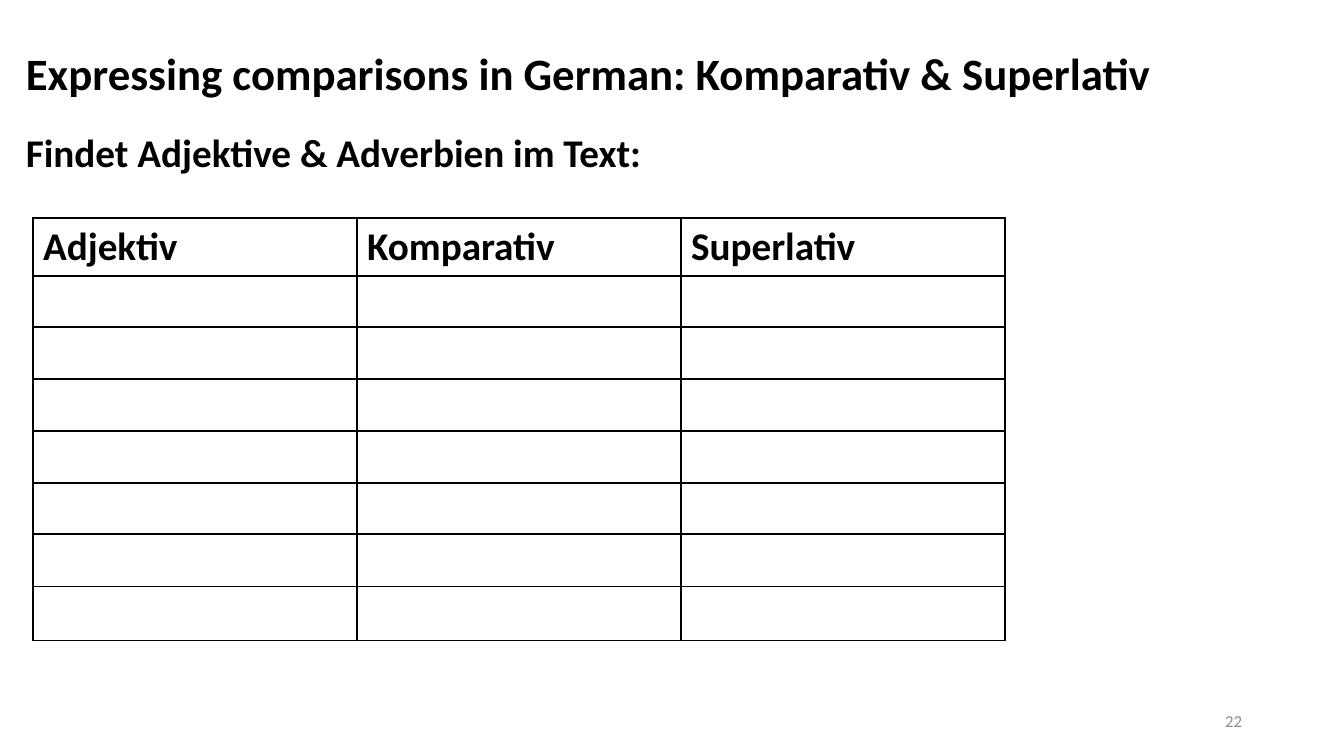
"""Build a slide with a worksheet table for German comparatives and superlatives."""
from lxml import etree
from pptx import Presentation
from pptx import util as u
from pptx.dml.color import RGBColor
from pptx.enum import text
from pptx.oxml import ns

SCALE = 914400 / 100.8
BLACK = "000000"
GREY = "8C8C8C"


def px(length):
    return u.Emu(round(length * SCALE))


def style(para, size, color, bold):
    para.font.name = "Calibri"
    para.font.size = u.Pt(size)
    para.font.bold = bold
    para.font.color.rgb = RGBColor.from_string(color)


deck = Presentation()
deck.slide_width, deck.slide_height = px(1344), px(756)
page = deck.slides.add_slide(deck.slide_layouts[6])

LEFT, MIDDLE = text.PP_ALIGN.LEFT, text.MSO_ANCHOR.MIDDLE
lines = [
    ("Expressing comparisons in German: Komparativ & Superlativ",
     (16, 24, 1158, 105), 32, BLACK, True, LEFT, MIDDLE, 0.9),
    ("Findet Adjektive & Adverbien im Text:",
     (16, 129, 1303, 60), 28, BLACK, True, LEFT, text.MSO_ANCHOR.TOP, 0.9),
    ("22", (950, 701, 302, 40), 12, GREY, False, text.PP_ALIGN.RIGHT, MIDDLE, 1.0),
]
for words, place, size, color, bold, align, anchor, spacing in lines:
    box = page.shapes.add_textbox(*map(px, place))
    frame = box.text_frame
    frame.word_wrap = True
    frame.vertical_anchor = anchor
    para = frame.paragraphs[0]
    para.text = words
    para.alignment = align
    para.line_spacing = spacing
    style(para, size, color, bold)

headings = ["Adjektiv", "Komparativ", "Superlativ"]
row_heights = [58, 51, 52, 52, 52, 51, 53, 54]
table = page.shapes.add_table(
    len(row_heights), len(headings), px(33), px(218), px(972), px(sum(row_heights))
).table
table.first_row = table.horz_banding = False
for column in table.columns:
    column.width = px(324)
for row, height in zip(table.rows, row_heights):
    row.height = px(height)

for cell in table.iter_cells():
    properties = cell._tc.get_or_add_tcPr()
    for side in ("a:lnL", "a:lnR", "a:lnT", "a:lnB"):
        border = etree.SubElement(properties, ns.qn(side), w=str(u.Pt(1)))
        fill = etree.SubElement(border, ns.qn("a:solidFill"))
        etree.SubElement(fill, ns.qn("a:srgbClr"), val=BLACK)
    cell.fill.background()

for cell, heading in zip(table.rows[0].cells, headings):
    cell.text = heading
    style(cell.text_frame.paragraphs[0], 28, BLACK, True)

deck.save("out.pptx")
